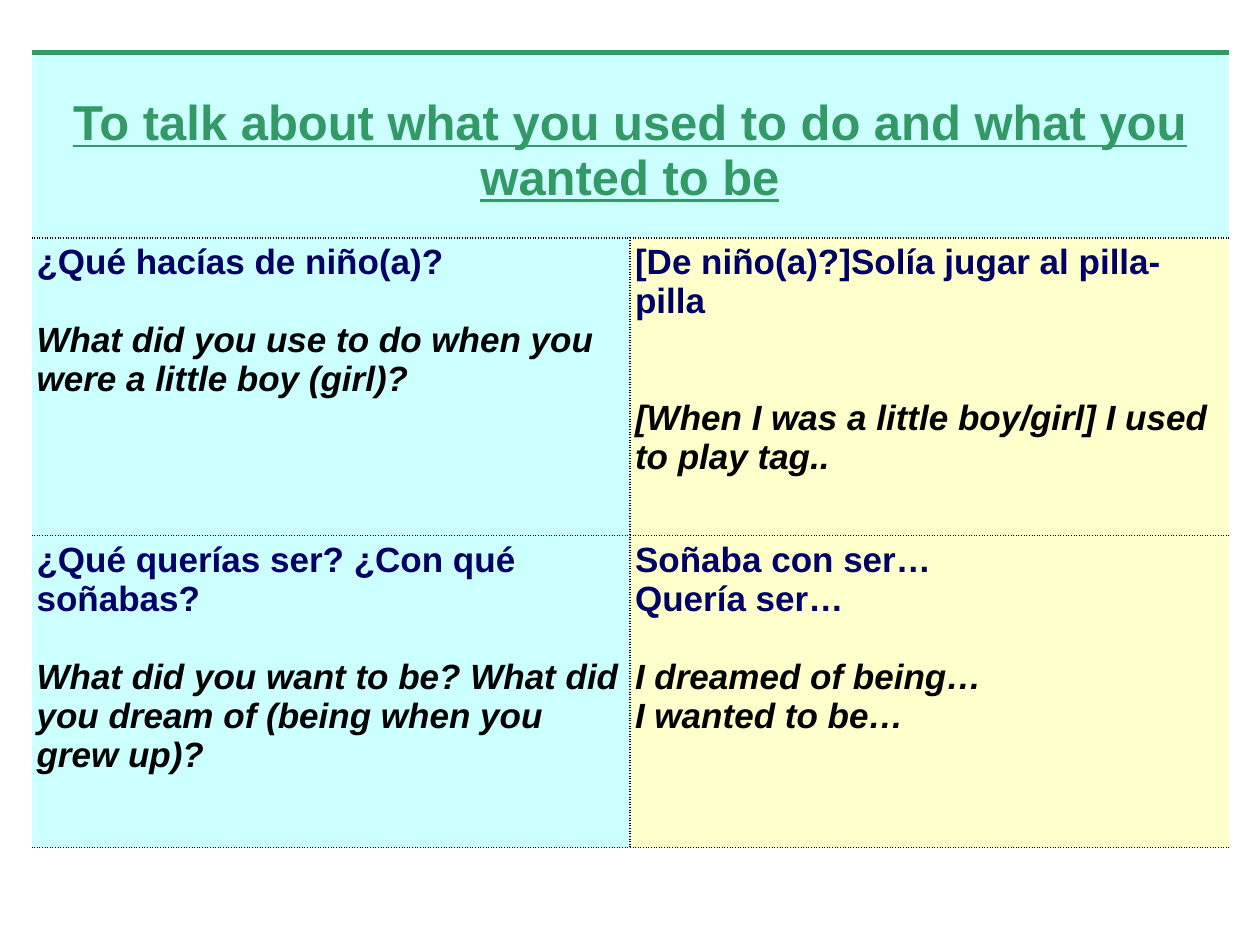
from lxml.etree import SubElement
from pptx import Presentation
from pptx.dml.color import RGBColor
from pptx.enum.text import PP_ALIGN
from pptx.oxml.ns import qn
from pptx.util import Pt

GREEN, NAVY, BLACK = "339966", "000066", "000000"
AQUA, CREAM = "CCFFFF", "FFFFCC"
LINE = 22.3  # height of one 20 pt line, used as the gap between phrases

HEADING = {"size": Pt(28), "bold": True, "underline": True}
SPANISH = {"size": Pt(20), "bold": True}
ENGLISH = {"size": Pt(20), "bold": True, "italic": True}

DOTTED = (BLACK, 0.75, "dot")
THICK = (GREEN, 3.75, "solid")


def rgb(value):
    return RGBColor.from_string(value)


class SlideBuilder:
    font = "Arial"
    inset = 2.9
    plain_style = "{2D5ABB26-0587-4C30-8999-92F81FD0307C}"

    def __init__(self, prs):
        self.s = prs.slides.add_slide(prs.slide_layouts[6])

    def table(self, left, top, widths, heights):
        frame = self.s.shapes.add_table(len(heights), len(widths), Pt(left), Pt(top),
                                        Pt(sum(widths)), Pt(sum(heights)))
        table = frame.table
        table.first_row = table.horz_banding = False
        table._tbl.tblPr.find(qn("a:tableStyleId")).text = self.plain_style
        for column, width in zip(table.columns, widths):
            column.width = Pt(width)
        for row, height in zip(table.rows, heights):
            row.height = Pt(height)
        return table

    def cell(self, cell, fill, borders):
        """Set borders first, as they come before the fill in the cell's XML."""
        tc_pr = cell._tc.get_or_add_tcPr()
        for side in "LRTB":
            color, width, dash = borders.get(side, (None, 0, None))
            ln = SubElement(tc_pr, qn(f"a:ln{side}"), w=str(Pt(width)))
            if color is None:
                SubElement(ln, qn("a:noFill"))
                continue
            solid = SubElement(ln, qn("a:solidFill"))
            SubElement(solid, qn("a:srgbClr"), val=color)
            SubElement(ln, qn("a:prstDash"), val=dash)
        cell.fill.solid()
        cell.fill.fore_color.rgb = rgb(fill)
        for side in ("left", "right", "top", "bottom"):
            setattr(cell, f"margin_{side}", Pt(self.inset))

    def text(self, cell, paragraphs, align=PP_ALIGN.LEFT):
        """Write (text, format, color, lines of space before) paragraphs."""
        tf = cell.text_frame
        for i, (text, style, color, gap) in enumerate(paragraphs):
            p = tf.add_paragraph() if i else tf.paragraphs[0]
            p.alignment = align
            p.space_before = Pt(gap * LINE)
            r = p.add_run()
            r.text = text
            r.font.name = self.font
            r.font.color.rgb = rgb(color)
            for name, value in style.items():
                setattr(r.font, name, value)


def spanish(text, gap=0):
    return text, SPANISH, NAVY, gap


def english(text, gap=0):
    return text, ENGLISH, BLACK, gap


PHRASES = [
    [
        [spanish("¿Qué hacías de niño(a)?"),
         english("What did you use to do when you were a little boy (girl)?", 1)],
        [spanish("[De niño(a)?]Solía jugar al pilla-pilla"),
         english("[When I was a little boy/girl] I used to play tag..", 2)],
    ],
    [
        [spanish("¿Qué querías ser? ¿Con qué soñabas?"),
         english("What did you want to be? What did you dream of "
                 "(being when you grew up)?", 1)],
        [spanish("Soñaba con ser…"),
         spanish("Quería ser…"),
         english("I dreamed of being…", 1),
         english("I wanted to be…")],
    ],
]


def main():
    prs = Presentation()
    prs.slide_width, prs.slide_height = Pt(720), Pt(540)
    builder = SlideBuilder(prs)
    table = builder.table(18, 30, [342, 342], [106, 170, 178.5])

    heading = table.cell(0, 0)
    for col in range(2):
        builder.cell(table.cell(0, col), AQUA, {"T": THICK, "B": DOTTED})
    heading.merge(table.cell(0, 1))
    heading.margin_top = Pt(builder.inset + LINE)
    builder.text(heading, [("To talk about what you used to do and what you wanted to be",
                            HEADING, GREEN, 0)], PP_ALIGN.CENTER)

    columns = [(AQUA, "R"), (CREAM, "L")]
    for row, phrases in enumerate(PHRASES, start=1):
        for col, (fill, inner_side) in enumerate(columns):
            cell = table.cell(row, col)
            builder.cell(cell, fill, dict.fromkeys(["T", "B", inner_side], DOTTED))
            builder.text(cell, phrases[col])

    prs.save("out.pptx")


if __name__ == "__main__":
    main()
